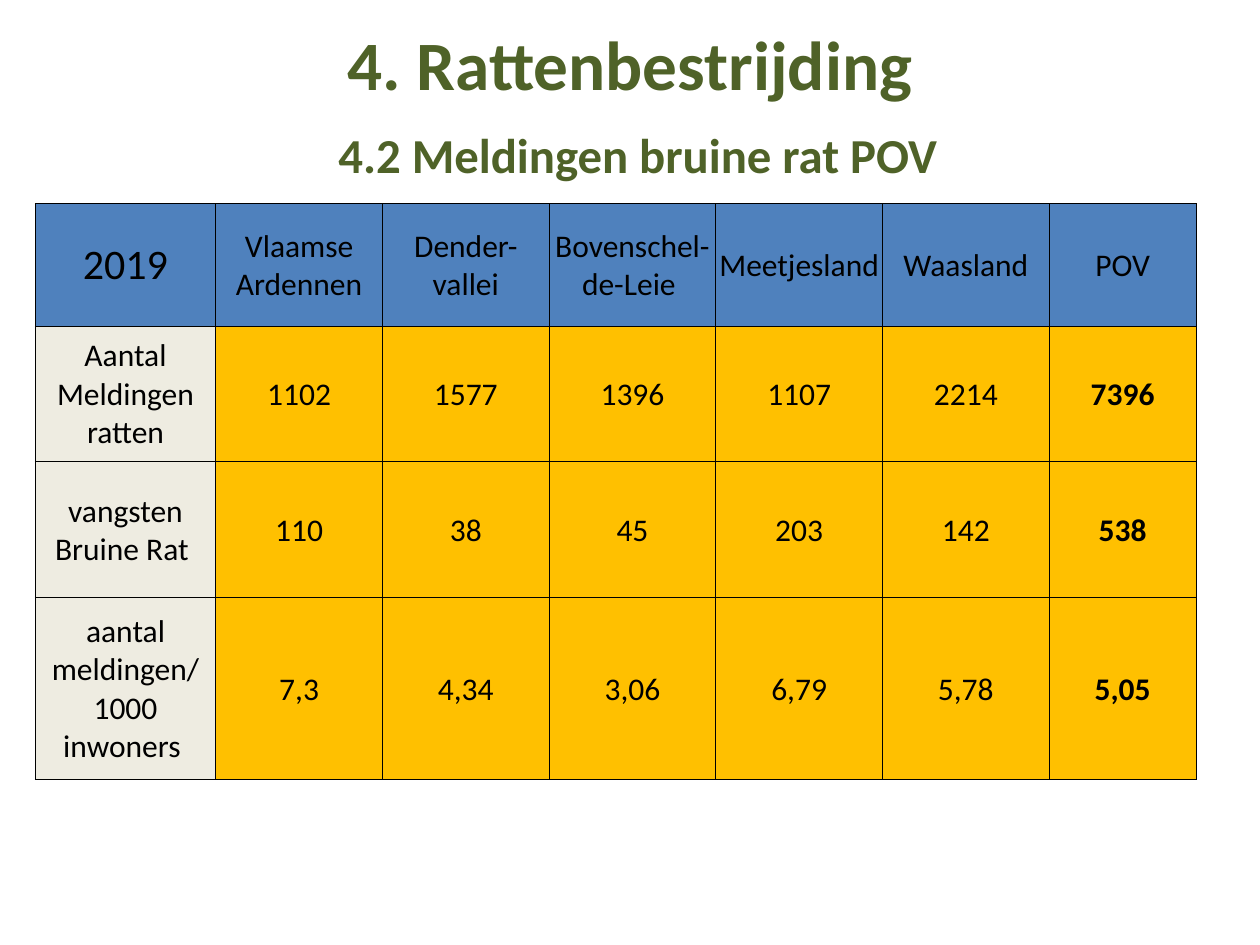
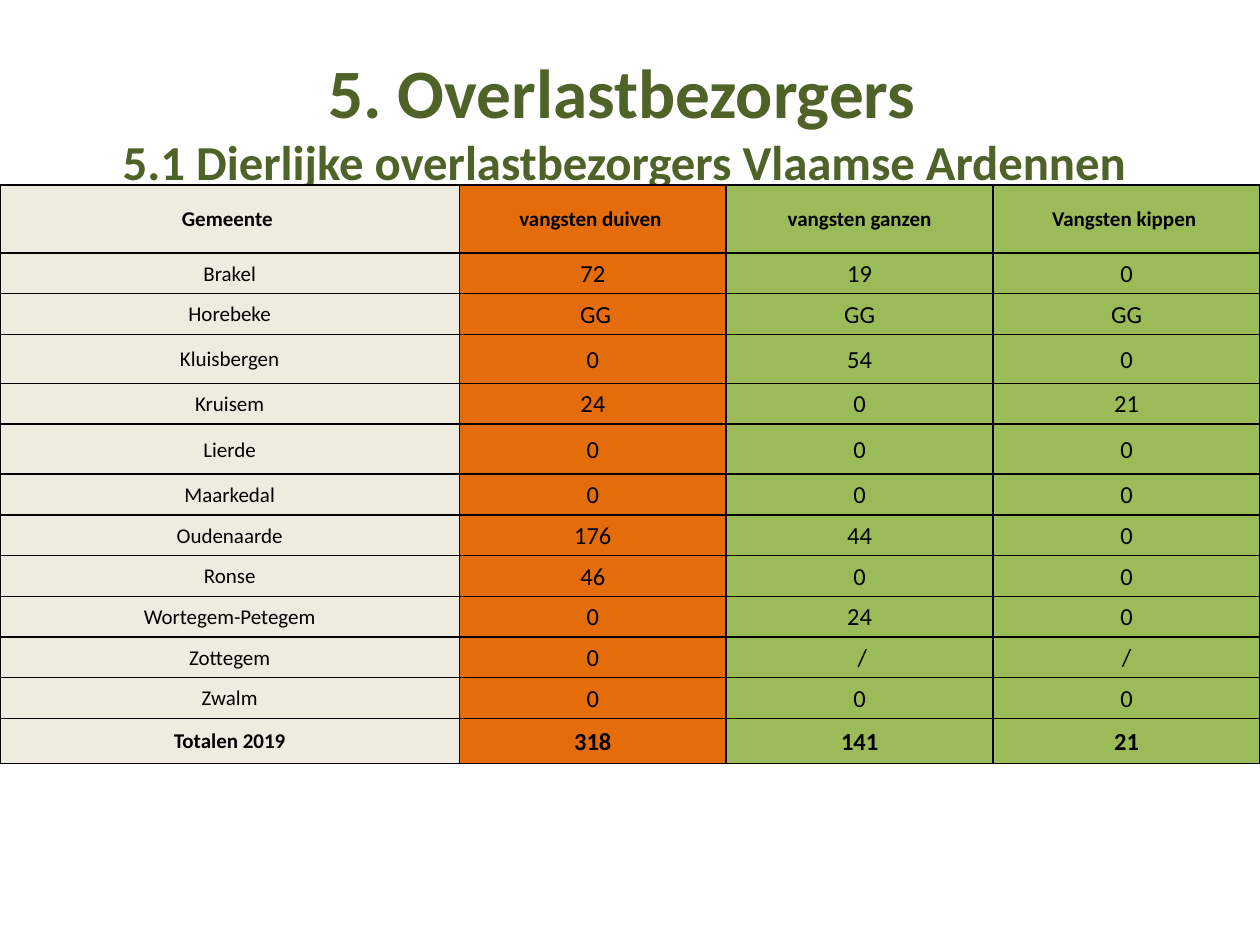
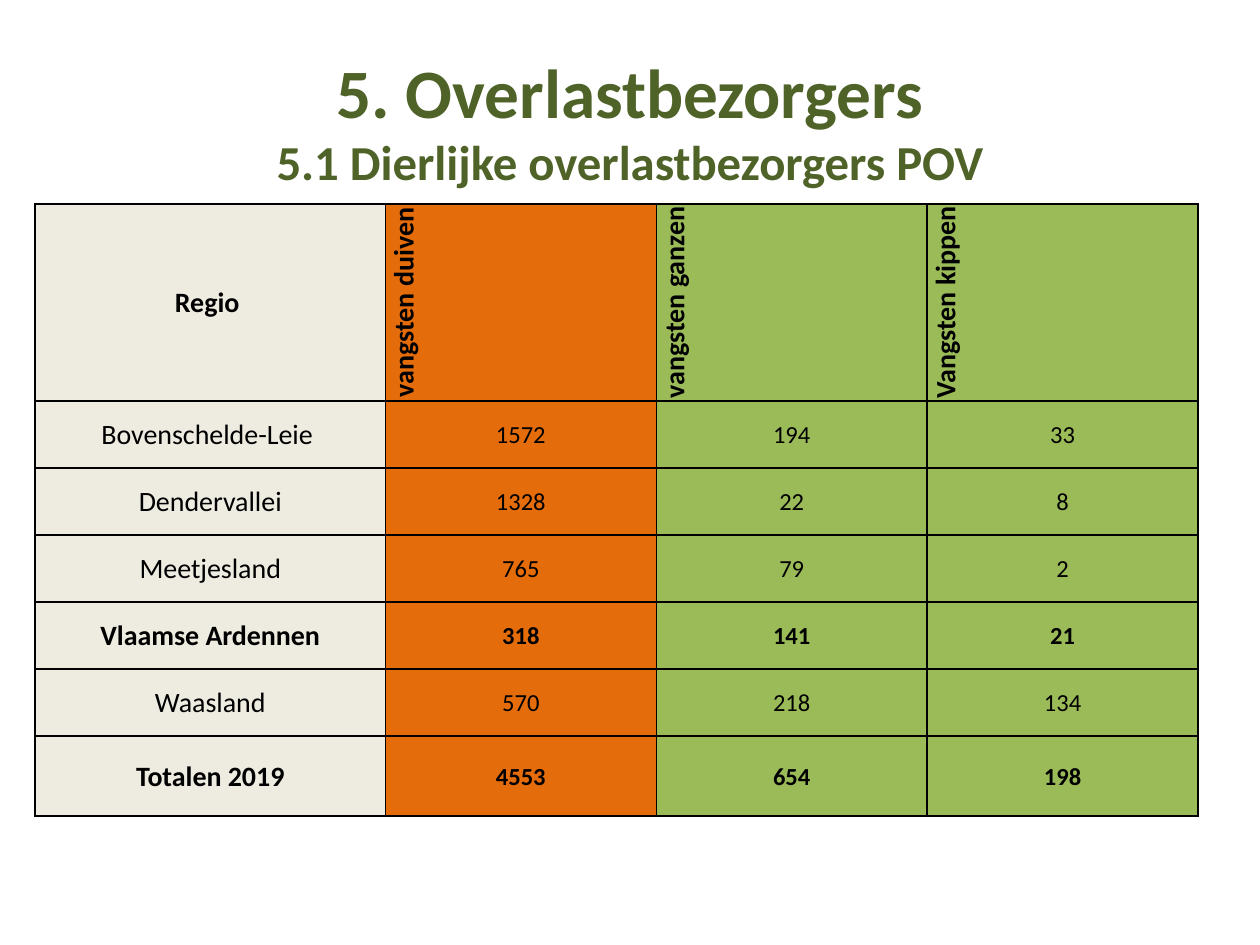
from lxml.etree import SubElement as Sub
from pptx import Presentation
from pptx.dml.color import RGBColor
from pptx.enum.text import MSO_ANCHOR as Anchor, MSO_AUTO_SIZE as Fit, PP_ALIGN as Align
from pptx.oxml.ns import qn
from pptx.util import Cm, Pt

FONT = "Calibri"
BLACK = RGBColor(0x00, 0x00, 0x00)
MOSS = RGBColor(0x4F, 0x62, 0x28)
BLUE = RGBColor(0x4F, 0x81, 0xBD)
GOLD = RGBColor(0xFF, 0xC0, 0x00)
CREAM = RGBColor(0xEE, 0xEC, 0xE1)
RUST = RGBColor(0xE4, 0x6C, 0x0A)
LIME = RGBColor(0x9B, 0xBB, 0x59)
CATCH = [CREAM, RUST, LIME, LIME]

RATS = [
    ["2019", "Vlaamse Ardennen", "Dender-vallei", "Bovenschel-de-Leie ",
     "Meetjesland", "Waasland", "POV"],
    ["Aantal Meldingen ratten", "1102", "1577", "1396", "1107", "2214", "7396"],
    ["vangsten Bruine Rat ", "110", "38", "45", "203", "142", "538"],
    ["aantal meldingen/ 1000 inwoners ", "7,3", "4,34", "3,06", "6,79", "5,78", "5,05"],
]
TOWNS = [
    ["Gemeente ", "vangsten duiven ", "vangsten ganzen", "Vangsten kippen "],
    ["Brakel", "72", "19", "0"],
    ["Horebeke", " GG", "GG", "GG"],
    ["Kluisbergen", "0", "54", "0"],
    ["Kruisem", "24", "0", "21"],
    ["Lierde", "0", "0", "0"],
    ["Maarkedal", "0", "0", "0"],
    ["Oudenaarde", "176", "44", "0"],
    ["Ronse", "46", "0", "0"],
    ["Wortegem-Petegem", "0", "24", "0"],
    ["Zottegem", "0", " /", "/"],
    ["Zwalm", "0", "0", "0"],
    ["Totalen 2019", "318", "141", "21"],
]
ZONES = [
    ["Regio ", "vangsten duiven ", "vangsten ganzen", "Vangsten kippen"],
    ["Bovenschelde-Leie ", "1572", "194", "33"],
    ["Dendervallei", "1328", "22", "8"],
    ["Meetjesland", "765", "79", "2"],
    ["Vlaamse Ardennen", "318", "141", "21"],
    ["Waasland", "570", "218", "134"],
    ["Totalen 2019", "4553", "654", "198"],
]


def style(font, size, bold, color):
    font.name = FONT
    font.size = Pt(size)
    font.bold = bold
    font.color.rgb = color


def add_page(deck, head, sub, high):
    page = deck.slides.add_slide(deck.slide_layouts[5])
    title = page.shapes.title
    title.left, title.top = Cm(1.27), Cm(0.76)
    title.width, title.height = Cm(22.86), Cm(high)
    frame = title.text_frame
    frame.auto_size = Fit.NONE
    frame.vertical_anchor = Anchor.MIDDLE
    frame.margin_bottom = 0
    frame.text = head
    par = frame.paragraphs[0]
    par.alignment = Align.CENTER
    par.add_run().text = sub
    for run in par.runs:
        style(run.font, 39.6, True, MOSS)
    par.runs[-1].font.size = Pt(27.9)
    return page


def add_edges(cell, width):
    props = cell._tc.get_or_add_tcPr()
    for side in ("a:lnL", "a:lnR", "a:lnT", "a:lnB"):
        line = Sub(props, qn(side), w=str(Pt(width)))
        fill = Sub(line, qn("a:solidFill"))
        Sub(fill, qn("a:srgbClr"), val=str(BLACK))


def fill_cell(cell, text, size, bold, color, edge):
    cell.text = text
    cell.vertical_anchor = Anchor.MIDDLE
    cell.margin_left = cell.margin_right = cell.margin_top = Cm(0.03)
    cell.margin_bottom = 0
    par = cell.text_frame.paragraphs[0]
    par.alignment = Align.CENTER
    style(par.runs[0].font, size, bold, BLACK)
    add_edges(cell, edge)
    cell.fill.solid()
    cell.fill.fore_color.rgb = color


def add_grid(page, data, left, top, cols, rows, size, bold, color, edge=1):
    shape = page.shapes.add_table(len(rows), len(cols), Cm(left), Cm(top),
                                  Cm(sum(cols)), Cm(sum(rows)))
    grid = shape.table
    grid.first_row = grid.horz_banding = False
    for col, wide in zip(grid.columns, cols):
        col.width = Cm(wide)
    for row, high in zip(grid.rows, rows):
        row.height = Cm(high)
    for r, line in enumerate(data):
        for c, text in enumerate(line):
            fill_cell(grid.cell(r, c), text, size(r, c), bold(r, c), color(r, c), edge)
    return grid


def rat_fill(r, c):
    if r == 0:
        return BLUE
    return GOLD if c else CREAM


def catch_fill(r, c):
    return CATCH[c]


def add_rats(deck):
    page = add_page(deck, "4. Rattenbestrijding\v ", "4.2 Meldingen bruine rat POV", 2.57)
    add_grid(page, RATS, 0.71, 4.11, [3.64] + [3.36] * 5 + [2.96],
             [2.46, 2.74, 2.74, 3.66],
             lambda r, c: 18 if r or c else 24,
             lambda r, c: r > 0 and c == 6, rat_fill, 0.5)


def add_towns(deck):
    page = add_page(deck, "5. Overlastbezorgers \v",
                    "5.1 Dierlijke overlastbezorgers Vlaamse Ardennen ", 3.18)
    rows = [1.37, 0.82, 0.82, 0.99, 0.82, 1.01] + [0.82] * 6 + [0.91]
    add_grid(page, TOWNS, 0, 3.73, [9.26] + [5.38] * 3, rows,
             lambda r, c: 14 if r and c else 12,
             lambda r, c: r in (0, 12), catch_fill)


def add_zones(deck):
    page = add_page(deck, "5. Overlastbezorgers\v",
                    "5.1 Dierlijke overlastbezorgers POV", 3.18)
    grid = add_grid(page, ZONES, 0.71, 4.11, [7.06] + [5.46] * 3,
                    [3.43] + [1.35] * 5 + [1.62],
                    lambda r, c: 14 if r and c else 16,
                    lambda r, c: r in (0, 4, 6), catch_fill)
    for c in range(1, 4):
        grid.cell(0, c)._tc.get_or_add_tcPr().set("vert", "vert270")


def main():
    deck = Presentation()
    deck.slide_width, deck.slide_height = Cm(25.4), Cm(19.05)
    add_rats(deck)
    add_towns(deck)
    add_zones(deck)
    deck.save("out.pptx")


if __name__ == "__main__":
    main()
